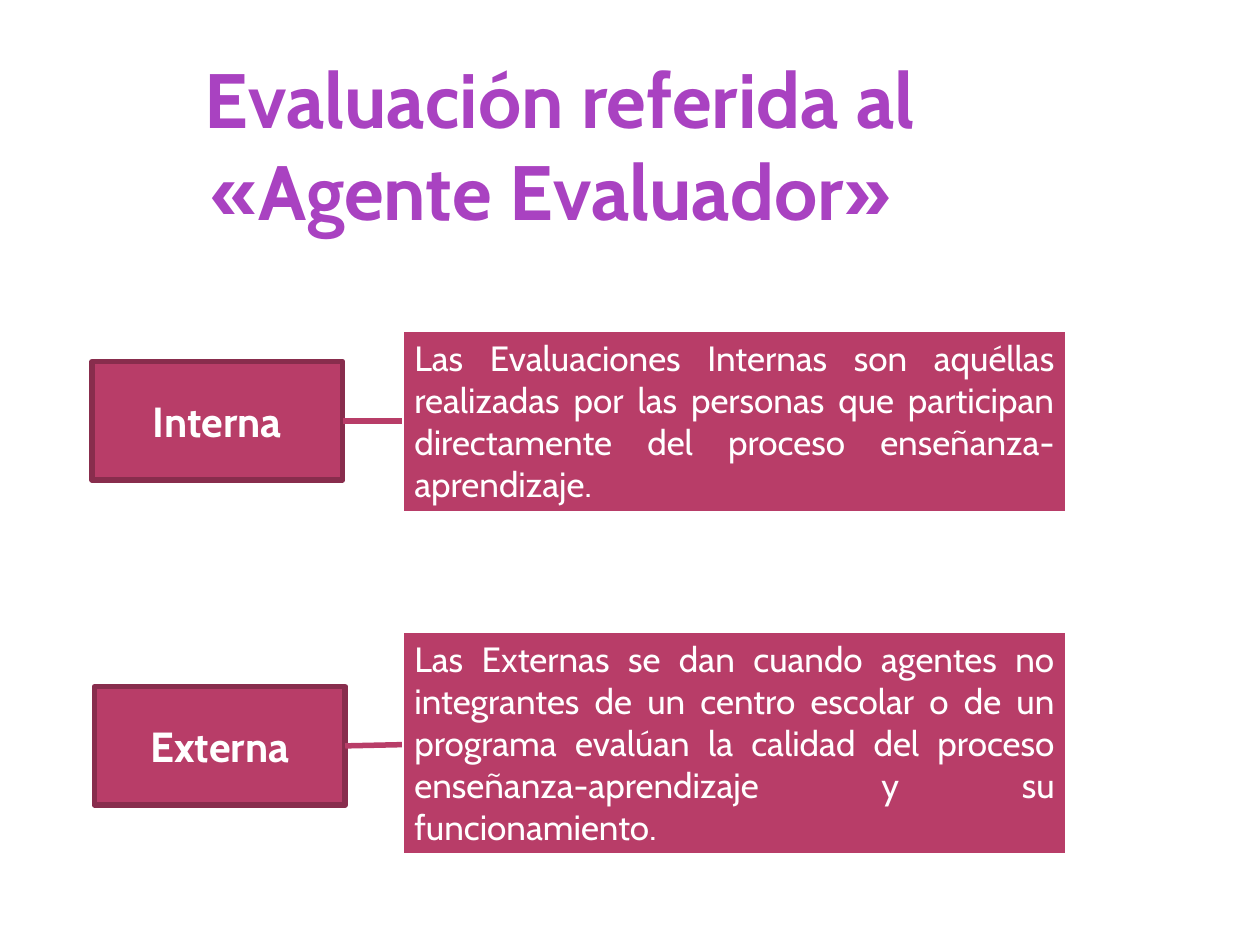
from dataclasses import dataclass
from lxml.etree import SubElement
from pptx import Presentation
from pptx.dml.color import RGBColor
from pptx.enum.shapes import MSO_CONNECTOR, MSO_SHAPE
from pptx.enum.text import MSO_ANCHOR, MSO_AUTO_SIZE, PP_ALIGN
from pptx.oxml.ns import qn
from pptx.util import Inches, Pt

FONT = "Cabin"
ROSE = "B83D68"
WINE = "882D4D"
WHITE = "FFFFFF"
PURPLE = "A942C1"


@dataclass
class Box:
    left: float
    top: float
    width: float
    height: float


@dataclass
class Style:
    size: float
    tint: str
    align: PP_ALIGN
    bold: bool = False
    grow: bool = True


@dataclass
class Agent:
    name: str
    text: str
    label: Box
    panel: Box
    end: float


TITLE = Style(44, PURPLE, PP_ALIGN.CENTER, bold=True)
LABEL = Style(24, WHITE, PP_ALIGN.CENTER, bold=True, grow=False)
BODY = Style(20, WHITE, PP_ALIGN.JUSTIFY)

AGENTS = [
    Agent(
        "Interna",
        "Las Evaluaciones Internas son aquéllas realizadas por las personas "
        "que participan directamente del proceso enseñanza-aprendizaje. ",
        Box(0.73, 2.87, 1.99, 0.94),
        Box(3.19, 2.62, 5.28, 1.45),
        3.34,
    ),
    Agent(
        "Externa",
        "Las Externas se dan cuando agentes no integrantes de un centro "
        "escolar o de un programa evalúan la calidad del proceso "
        "enseñanza-aprendizaje y su funcionamiento.",
        Box(0.75, 5.45, 1.99, 0.94),
        Box(3.19, 5.01, 5.28, 1.78),
        5.91,
    ),
]


def color(code: str) -> RGBColor:
    return RGBColor.from_string(code)


def place(box: Box) -> list:
    return [Inches(n) for n in (box.left, box.top, box.width, box.height)]


def write(shape, text: str, style: Style) -> None:
    frame = shape.text_frame
    frame.word_wrap = True
    frame.vertical_anchor = MSO_ANCHOR.TOP if style.grow else MSO_ANCHOR.MIDDLE
    if style.grow:
        frame.auto_size = MSO_AUTO_SIZE.SHAPE_TO_FIT_TEXT
    para = frame.paragraphs[0]
    para.alignment = style.align
    run = para.add_run()
    run.text = text
    run.font.name = FONT
    run.font.size = Pt(style.size)
    run.font.bold = style.bold
    run.font.color.rgb = color(style.tint)


def draw_box(slide, box: Box, text: str, style: Style, edge: str, width: float) -> None:
    shape = slide.shapes.add_shape(MSO_SHAPE.RECTANGLE, *place(box))
    shape.shadow.inherit = False
    shape.fill.solid()
    shape.fill.fore_color.rgb = color(ROSE)
    shape.line.color.rgb = color(edge)
    shape.line.width = Pt(width)
    write(shape, text, style)


def draw_link(slide, agent: Agent) -> None:
    label = agent.label
    line = slide.shapes.add_connector(
        MSO_CONNECTOR.STRAIGHT,
        Inches(label.left + label.width),
        Inches(label.top + label.height / 2),
        Inches(agent.panel.left),
        Inches(agent.end),
    )
    line.line.color.rgb = color(ROSE)
    line.line.width = Pt(3.15)
    SubElement(line._element.spPr, qn("a:effectLst"))


def main() -> None:
    deck = Presentation()
    deck.slide_width = Inches(10)
    deck.slide_height = Inches(7.5)
    slide = deck.slides.add_slide(deck.slide_layouts[6])
    title = slide.shapes.add_textbox(*place(Box(0.43, 0.36, 8.03, 1.58)))
    write(title, "Evaluación referida al «Agente Evaluador» ", TITLE)
    for agent in AGENTS:
        draw_box(slide, agent.panel, agent.text, BODY, WHITE, 2.5)
        draw_box(slide, agent.label, agent.name, LABEL, WINE, 3.15)
    for agent in AGENTS:
        draw_link(slide, agent)
    deck.save("out.pptx")


if __name__ == "__main__":
    main()
